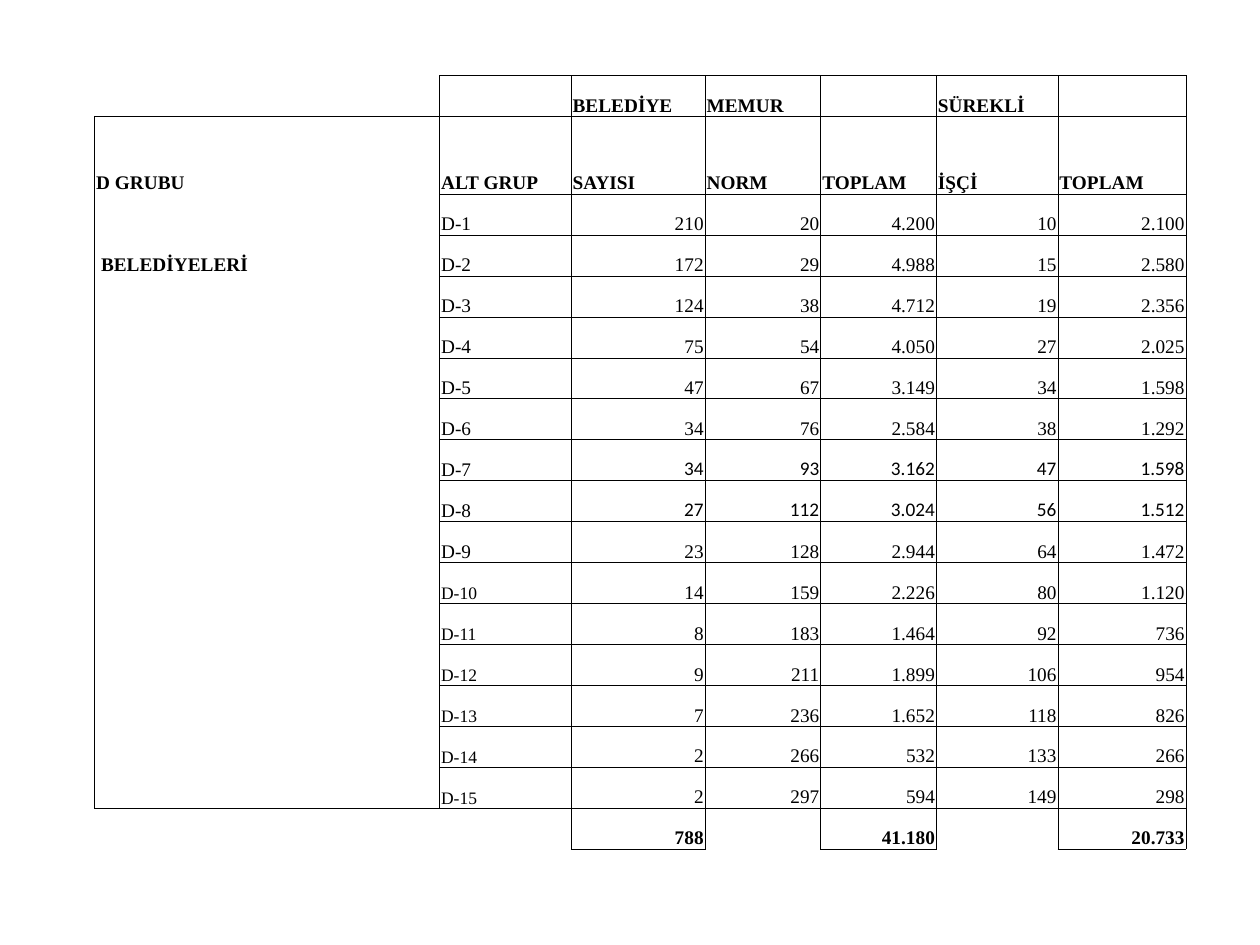
from lxml.etree import SubElement
from pptx import Presentation
from pptx.dml.color import RGBColor
from pptx.enum.text import MSO_ANCHOR, PP_ALIGN
from pptx.oxml.ns import qn
from pptx.util import Cm, Pt

COLORS = {"ink": "000000", "page": "FFFFFF"}
SERIF, SANS = "Times New Roman", "Calibri"
COLUMN_WIDTHS = [6.95, 2.65, 2.7, 2.33, 2.33, 2.45, 2.58]
TALL_ROW, TALL_HEIGHT = 1, 1.57

HEADERS = [
    ["", "", "BELEDİYE", "MEMUR", "", "SÜREKLİ", ""],
    ["D GRUBU", "ALT GRUP", "SAYISI", "NORM", "TOPLAM", "İŞÇİ", "TOPLAM"],
]
SUBGROUPS = [
    ["210", "20", "4.200", "10", "2.100"],
    ["172", "29", "4.988", "15", "2.580"],
    ["124", "38", "4.712", "19", "2.356"],
    ["75", "54", "4.050", "27", "2.025"],
    ["47", "67", "3.149", "34", "1.598"],
    ["34", "76", "2.584", "38", "1.292"],
    ["34", "93", "3.162", "47", "1.598"],
    ["27", "112", "3.024", "56", "1.512"],
    ["23", "128", "2.944", "64", "1.472"],
    ["14", "159", "2.226", "80", "1.120"],
    ["8", "183", "1.464", "92", "736"],
    ["9", "211", "1.899", "106", "954"],
    ["7", "236", "1.652", "118", "826"],
    ["2", "266", "532", "133", "266"],
    ["2", "297", "594", "149", "298"],
]
TOTALS = ["", "", "788", "", "41.180", "", "20.733"]
GROUP_LABELS = {2: " BELEDİYELERİ"}
SANS_SUBGROUPS = (7, 8)
FIRST_SMALL_SUBGROUP = 10


def table_rows():
    body = [[GROUP_LABELS.get(number, ""), f"D-{number}", *values]
            for number, values in enumerate(SUBGROUPS, start=1)]
    return HEADERS + body + [TOTALS]


def cell_edges(row, column, last_row):
    """Return the ruled sides of a cell as letters from LRTB."""
    if column == 0:
        if row == 0:
            return "RB"
        if row == last_row:
            return "T"
        return "LR" + ("T" if row == 1 else "") + ("B" if row == last_row - 1 else "")
    if row == last_row and not TOTALS[column]:
        return "TR" if column == 1 else "LTR"
    return "LRTB"


def rule_cell(cell, edges):
    properties = cell._tc.get_or_add_tcPr()
    for side in "LRTB":
        line = SubElement(properties, qn(f"a:ln{side}"), w=str(Pt(0.5)))
        if side in edges:
            fill = SubElement(line, qn("a:solidFill"))
            SubElement(fill, qn("a:srgbClr"), val=COLORS["ink"])
        else:
            SubElement(line, qn("a:noFill"))


def write_cell(cell, text, row, column, last_row):
    cell.margin_left = cell.margin_right = cell.margin_top = Cm(0.03)
    cell.margin_bottom = 0
    cell.vertical_anchor = MSO_ANCHOR.BOTTOM
    cell.text_frame.text = text
    para = cell.text_frame.paragraphs[0]
    subgroup = row - len(HEADERS) + 1
    is_number = subgroup >= 1 and column >= 2
    is_small = column == 1 and subgroup >= FIRST_SMALL_SUBGROUP
    para.alignment = PP_ALIGN.RIGHT if is_number else PP_ALIGN.LEFT
    for span in para.runs:
        span.font.name = SANS if is_number and subgroup in SANS_SUBGROUPS else SERIF
        span.font.size = Pt(10 if is_small else 11)
        span.font.bold = column == 0 or subgroup < 1 or row == last_row
        span.font.color.rgb = RGBColor.from_string(COLORS["ink"])


def add_staff_table(page, left, top, width, height):
    rows = table_rows()
    last_row = len(rows) - 1
    table = page.shapes.add_table(len(rows), len(COLUMN_WIDTHS), Cm(left), Cm(top),
                                  Cm(width), Cm(height)).table
    table.first_row = table.horz_banding = False
    scale = width / sum(COLUMN_WIDTHS)
    for column, column_width in zip(table.columns, COLUMN_WIDTHS):
        column.width = Cm(column_width * scale)
    row_height = (height - TALL_HEIGHT) / last_row
    for row, texts in enumerate(rows):
        table.rows[row].height = Cm(TALL_HEIGHT if row == TALL_ROW else row_height)
        for column, text in enumerate(texts):
            cell = table.cell(row, column)
            write_cell(cell, text, row, column, last_row)
            rule_cell(cell, cell_edges(row, column, last_row))
            cell.fill.background()


def main():
    deck = Presentation()
    deck.slide_width, deck.slide_height = Cm(25.4), Cm(19.05)
    page = deck.slides.add_slide(deck.slide_layouts[6])
    page.background.fill.solid()
    page.background.fill.fore_color.rgb = RGBColor.from_string(COLORS["page"])
    add_staff_table(page, 1.91, 1.52, 22, 15.6)
    deck.save("out.pptx")


if __name__ == "__main__":
    main()
